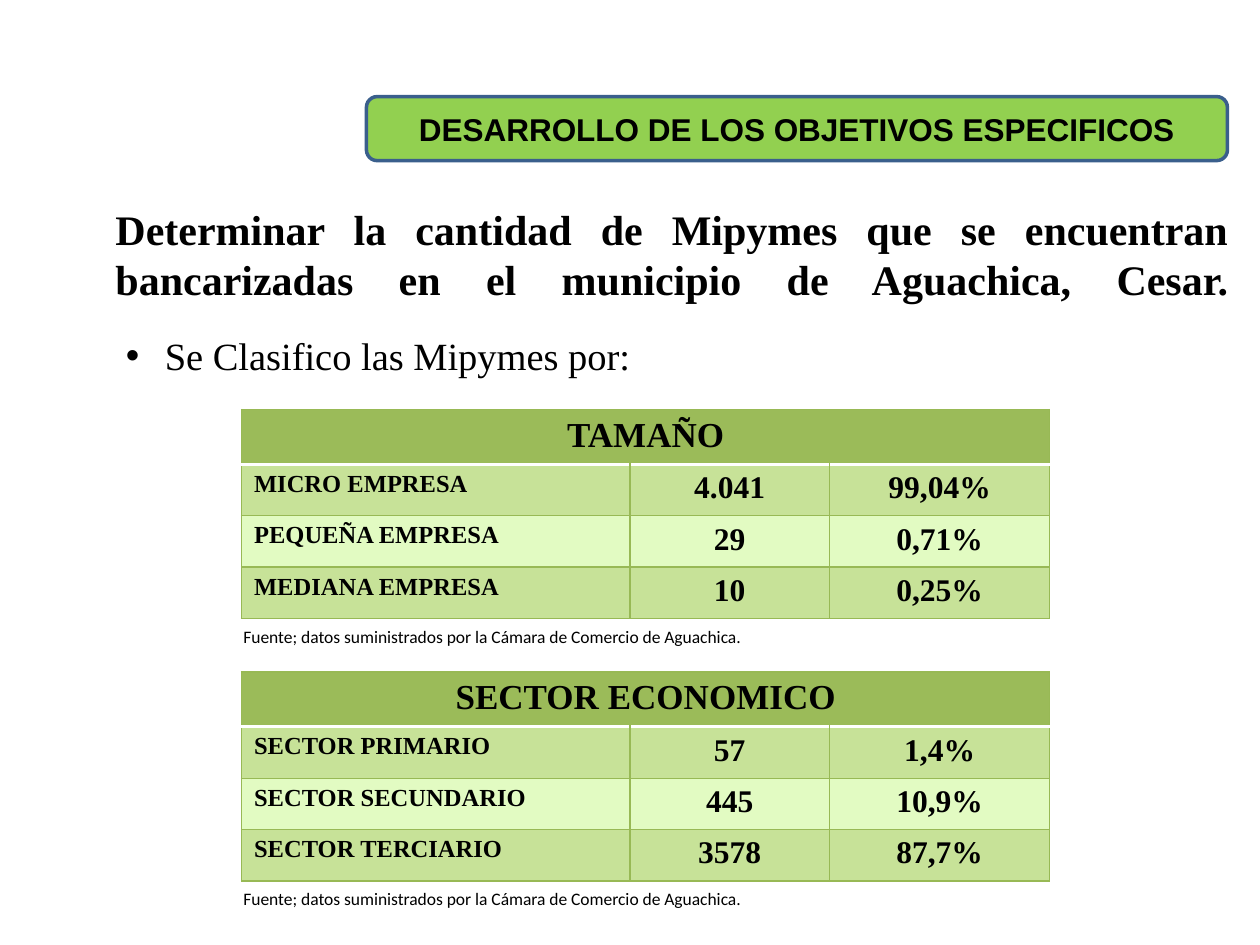
import pptx
import pptx.util
import pptx.dml.color
import pptx.enum.shapes
import pptx.enum.text
import pptx.oxml
import pptx.oxml.ns

COLORS = {
    "ink": "000000", "banner": "92D050", "outline": "3A5F8C", "header": "9BBB59",
    "band": "C7E298", "plain": "E2FBC2", "border": "98B955", "white": "FFFFFF",
}
ALIGN = pptx.enum.text.PP_ALIGN
ANCHOR = pptx.enum.text.MSO_ANCHOR
SERIF = "Times New Roman"
SOURCE = "Fuente; datos suministrados por la Cámara de Comercio de Aguachica."


def color(name):
    return pptx.dml.color.RGBColor.from_string(COLORS[name])


class SlideBuilder:
    def __init__(self, deck, columns, rows):
        self.page = deck.slides.add_slide(deck.slide_layouts[6])
        self.column = deck.slide_width / columns
        self.row = deck.slide_height / rows

    def place(self, left, top, width, height):
        return (round(left * self.column), round(top * self.row),
                round(width * self.column), round(height * self.row))

    def set_text(self, frame, text, size, font=SERIF, bold=False, align=ALIGN.LEFT):
        frame.word_wrap = True
        frame.text = text
        para = frame.paragraphs[0]
        para.alignment = align
        for span in para.runs:
            span.font.size = pptx.util.Pt(size)
            span.font.name = font
            span.font.bold = bold
            span.font.color.rgb = color("ink")

    def text(self, area, text, size, **style):
        box = self.page.shapes.add_textbox(*self.place(*area))
        self.set_text(box.text_frame, text, size, **style)
        return box

    def heading(self, area, text, size, drop):
        box = self.text(area, text, size, bold=True, align=ALIGN.JUSTIFY)
        frame = box.text_frame
        frame.margin_left = frame.margin_right = frame.margin_bottom = 0
        frame.margin_top = round(drop * self.row)
        frame.paragraphs[0].line_spacing = pptx.util.Pt(28.6)
        frame.paragraphs[0].add_line_break()

    def bullet(self, area, text, size):
        box = self.text(area, text, size, align=ALIGN.JUSTIFY)
        properties = box.text_frame.paragraphs[0]._p.get_or_add_pPr()
        indent = pptx.util.Inches(0.31)
        properties.set("marL", str(indent))
        properties.set("indent", str(-indent))
        for tag, key, value in (("buFont", "typeface", "Arial"), ("buChar", "char", "•")):
            properties.append(pptx.oxml.parse_xml(
                f'<a:{tag} {pptx.oxml.ns.nsdecls("a")} {key}="{value}"/>'))

    def banner(self, area, text, size):
        shape = self.page.shapes.add_shape(
            pptx.enum.shapes.MSO_SHAPE.ROUNDED_RECTANGLE, *self.place(*area))
        shape.shadow.inherit = False
        shape.fill.solid()
        shape.fill.fore_color.rgb = color("banner")
        shape.line.color.rgb = color("outline")
        shape.line.width = pptx.util.Pt(2)
        shape.text_frame.vertical_anchor = ANCHOR.MIDDLE
        self.set_text(shape.text_frame, text, size, "Arial", True, ALIGN.CENTER)

    def paint(self, cell, fill, top="border", bottom="border"):
        cell.fill.solid()
        cell.fill.fore_color.rgb = color(fill)
        properties = cell._tc.get_or_add_tcPr()
        sides = {"L": "border", "R": "border", "T": top, "B": bottom}
        for index, (side, name) in enumerate(sides.items()):
            width = pptx.util.Pt(2 if name == "white" else 0.75)
            properties.insert(index, pptx.oxml.parse_xml(
                f'<a:ln{side} {pptx.oxml.ns.nsdecls("a")} w="{width}"><a:solidFill>'
                f'<a:srgbClr val="{COLORS[name]}"/></a:solidFill></a:ln{side}>'))

    def table(self, left, top, widths, row_height, title, records):
        count = len(records) + 1
        area = self.place(left, top, sum(widths), row_height * count)
        grid = self.page.shapes.add_table(count, len(widths), *area).table
        for column, width in zip(grid.columns, widths):
            column.width = round(width * self.column)
        for cell in grid.rows[0].cells:
            self.paint(cell, "header", bottom="white")
        grid.cell(0, 0).merge(grid.cell(0, len(widths) - 1))
        self.set_text(grid.cell(0, 0).text_frame, title, 20, bold=True, align=ALIGN.CENTER)
        for index, record in enumerate(records, 1):
            for position, value in enumerate(record):
                cell = grid.cell(index, position)
                self.paint(cell, "band" if index % 2 else "plain",
                           top="white" if index == 1 else "border")
                self.set_text(cell.text_frame, value, 18 if position else 14, bold=True,
                              align=ALIGN.CENTER if position else ALIGN.LEFT)


def main():
    deck = pptx.Presentation()
    deck.slide_width = pptx.util.Inches(10)
    deck.slide_height = pptx.util.Inches(7.5)
    slide = SlideBuilder(deck, columns=120, rows=90)

    slide.heading((11, 12.1, 106, 25.7),
                  "Determinar la cantidad de Mipymes que se encuentran bancarizadas "
                  "en el municipio de Aguachica, Cesar.", 24, drop=7.3)
    slide.banner((34.9, 9.2, 82, 6.1), "DESARROLLO DE LOS OBJETIVOS ESPECIFICOS", 18)
    slide.bullet((10.8, 31, 106, 7.7), "Se Clasifico las Mipymes por:", 22)

    tables = (
        (39, "TAMAÑO", (("MICRO EMPRESA", "4.041", "99,04%"),
                        ("PEQUEÑA EMPRESA", "29", "0,71%"),
                        ("MEDIANA EMPRESA", "10", "0,25%"))),
        (64, "SECTOR ECONOMICO", (("SECTOR PRIMARIO", "57", "1,4%"),
                                  ("SECTOR SECUNDARIO", "445", "10,9%"),
                                  ("SECTOR TERCIARIO", "3578", "87,7%"))),
    )
    for top, title, records in tables:
        slide.table(23, top, (37, 19, 21), 4.9, title, records)
        slide.text((22, top + 20, 76, 3.2), SOURCE, 10, font="Calibri")

    deck.save("out.pptx")


if __name__ == "__main__":
    main()
